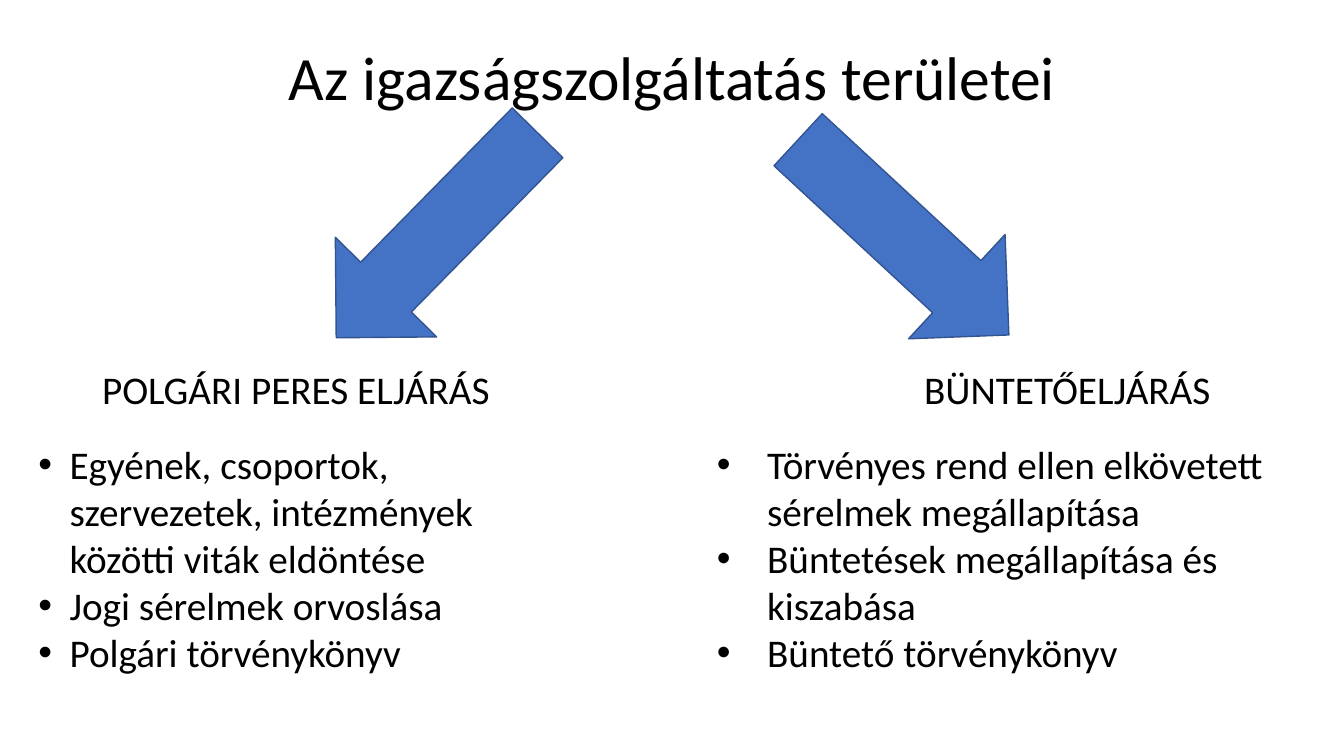
from lxml.etree import SubElement
from pptx import Presentation
from pptx.dml.color import RGBColor
from pptx.enum.shapes import MSO_SHAPE
from pptx.enum.text import MSO_ANCHOR, MSO_AUTO_SIZE, PP_ALIGN
from pptx.oxml.ns import qn
from pptx.util import Cm, Pt

BLACK = RGBColor(0x00, 0x00, 0x00)
BLUE = RGBColor(0x44, 0x72, 0xC4)
NAVY = RGBColor(0x32, 0x54, 0x91)
FONT = "Calibri"

HEAD_TOP, HEAD_HIGH = 9.09, 1.45
LIST_TOP, LIST_HIGH = 10.97, 6.25

# heading, heading left and width, list left, width and indent, items
SIDES = [
    ("POLGÁRI PERES ELJÁRÁS", 0.71, 13.49, 0.71, 14.12, 0.79, [
        "Egyének, csoportok, szervezetek, intézmények közötti viták eldöntése",
        "Jogi sérelmek orvoslása",
        "Polgári törvénykönyv",
    ]),
    ("BÜNTETŐELJÁRÁS", 20.62, 12.55, 17.81, 14.76, 1.27, [
        "Törvényes rend ellen elkövetett sérelmek megállapítása",
        "Büntetések megállapítása és kiszabása",
        "Büntető törvénykönyv",
    ]),
]
# left, top, rotation
ARROWS = [(9.22, 2.31, 44.5), (20.98, 2.36, 312.8)]


def place(shape, left, top, width, height):
    shape.left, shape.top = Cm(left), Cm(top)
    shape.width, shape.height = Cm(width), Cm(height)


def set_frame(holder, anchor):
    frame = holder.text_frame
    frame.word_wrap = True
    frame.auto_size = MSO_AUTO_SIZE.NONE
    frame.vertical_anchor = anchor
    return frame


def write(para, text, size, align, spacing=1.0):
    para.alignment = align
    para.line_spacing = spacing
    para.space_before = Pt(0)
    run = para.add_run()
    run.text = text
    font = run.font
    font.name, font.size, font.bold = FONT, Pt(size), False
    font.color.rgb = BLACK


def add_bullet(para, indent):
    props = para._p.get_or_add_pPr()
    props.set("marL", str(Cm(indent)))
    props.set("indent", str(-Cm(indent)))
    SubElement(props, qn("a:buFont")).set("typeface", "Arial")
    SubElement(props, qn("a:buChar")).set("char", "•")


def fill_line(holder, text, size, anchor, spacing=1.0):
    """Write one centred line into a placeholder."""
    frame = set_frame(holder, anchor)
    write(frame.paragraphs[0], text, size, PP_ALIGN.CENTER, spacing)


def fill_list(holder, items, indent):
    frame = set_frame(holder, MSO_ANCHOR.TOP)
    for i, item in enumerate(items):
        para = frame.add_paragraph() if i else frame.paragraphs[0]
        write(para, item, 28, PP_ALIGN.LEFT)
        add_bullet(para, indent)


def add_arrow(slide, left, top, angle):
    arrow = slide.shapes.add_shape(
        MSO_SHAPE.DOWN_ARROW, Cm(left), Cm(top), Cm(3.58), Cm(7.24))
    arrow.rotation = angle
    arrow.shadow.inherit = False
    arrow.fill.solid()
    arrow.fill.fore_color.rgb = BLUE
    arrow.line.color.rgb = NAVY
    arrow.line.width = Pt(1)


def main():
    deck = Presentation()
    deck.slide_width, deck.slide_height = Cm(33.87), Cm(19.05)
    slide = deck.slides.add_slide(deck.slide_layouts.get_by_name("Comparison"))

    title, *bodies = slide.placeholders
    place(title, 2.34, 0.18, 29.21, 3.68)
    fill_line(title, "Az igazságszolgáltatás területei", 44,
              MSO_ANCHOR.MIDDLE, 0.9)

    for arrow in ARROWS:
        add_arrow(slide, *arrow)

    pairs = zip(bodies[::2], bodies[1::2])
    for (head, body), side in zip(pairs, SIDES):
        text, head_left, head_wide, left, wide, indent, items = side
        place(head, head_left, HEAD_TOP, head_wide, HEAD_HIGH)
        fill_line(head, text, 28, MSO_ANCHOR.TOP)
        place(body, left, LIST_TOP, wide, LIST_HIGH)
        fill_list(body, items, indent)

    deck.save("out.pptx")


if __name__ == "__main__":
    main()
